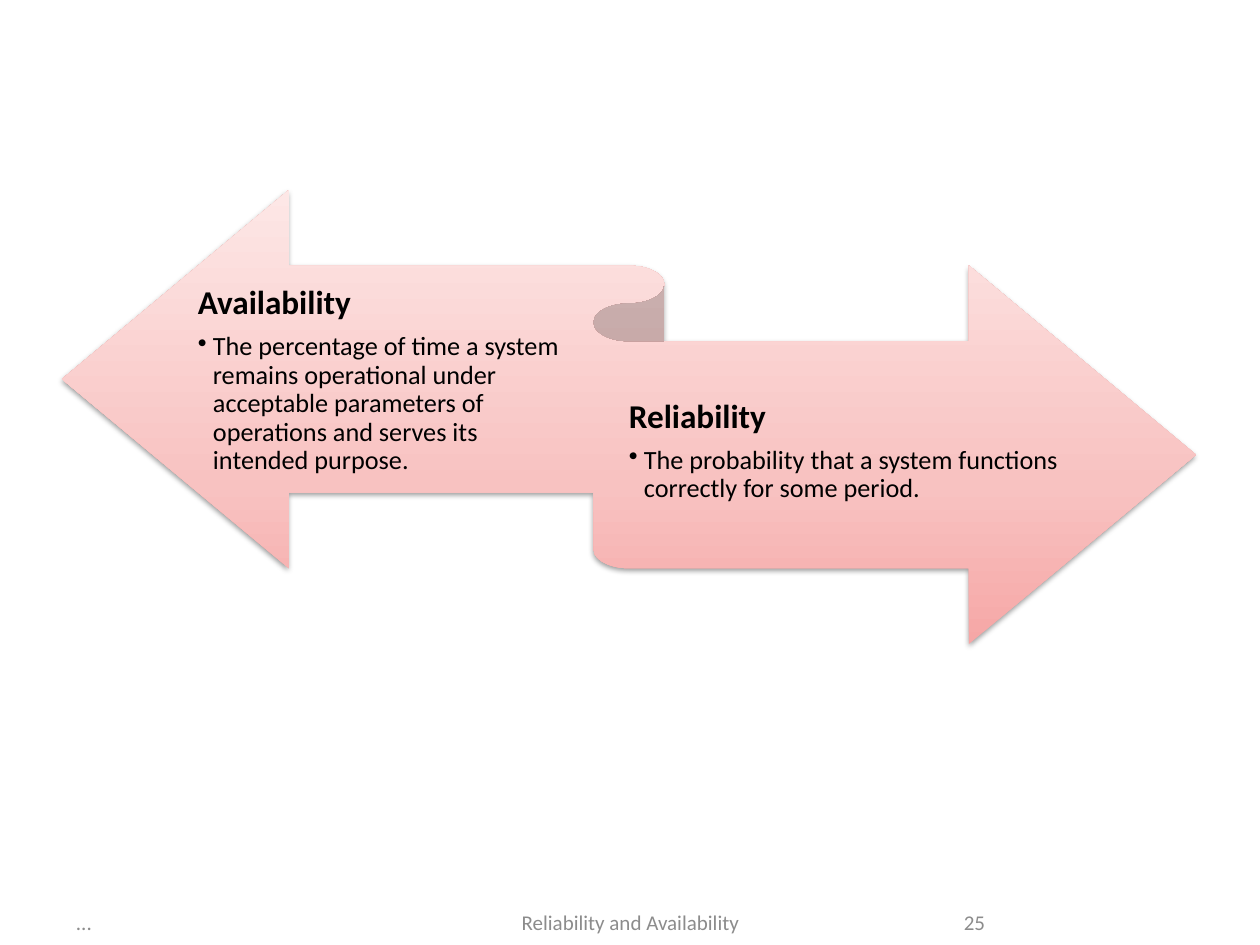
from lxml import etree
from pptx import Presentation
from pptx.dml.color import RGBColor
from pptx.enum.shapes import MSO_SHAPE
from pptx.enum.text import MSO_ANCHOR, PP_ALIGN
from pptx.oxml.ns import qn
from pptx.util import Emu, Pt

RIBBON = MSO_SHAPE.LEFT_RIGHT_RIBBON
MIDDLE = MSO_ANCHOR.MIDDLE
LEFT, CENTER, RIGHT = PP_ALIGN.LEFT, PP_ALIGN.CENTER, PP_ALIGN.RIGHT

EMU_PER_PX = 914400 / 126
FONT = "Calibri"
COLORS = {
    "text": "000000",
    "footer": "8C8C8C",
    "shadow": "000000",
    "ribbon_bottom": "F6A7A6",
    "ribbon_middle": "F8C2C1",
    "ribbon_top": "FDE7E6",
}
RIBBON_STOPS = [(0, "ribbon_bottom"), (35, "ribbon_middle"), (100, "ribbon_top")]
FOOTERS = [
    ("...", 63, 294, LEFT),
    ("Reliability and Availability", 431, 399, CENTER),
    ("25", 903, 95, RIGHT),
]
DEFINITIONS = [
    (
        "Availability",
        "The percentage of time a system remains operational under acceptable "
        "parameters of operations and serves its intended purpose.",
        (198, 270, 374, 222),
    ),
    (
        "Reliability",
        "The probability that a system functions correctly for some period.",
        (629, 341, 442, 222),
    ),
]


def px(length):
    return Emu(round(length * EMU_PER_PX))


def add_node(parent, tag, **attributes):
    return etree.SubElement(
        parent, qn(tag), {name: str(value) for name, value in attributes.items()}
    )


def add_box(page, area, margins=(13, 6, 13, 6)):
    frame = page.shapes.add_textbox(*map(px, area)).text_frame
    frame.word_wrap = True
    frame.vertical_anchor = MIDDLE
    frame.margin_left, frame.margin_top, frame.margin_right, frame.margin_bottom = map(
        px, margins
    )
    return frame


def write(para, text, size, color="text", bold=False, align=LEFT, spacing=1.0, after=0):
    para.alignment = align
    para.line_spacing = spacing
    para.space_after = Pt(after)
    span = para.add_run()
    span.text = text
    span.font.name = FONT
    span.font.size = Pt(size)
    span.font.bold = bold
    span.font.color.rgb = RGBColor.from_string(COLORS[color])


def add_bullet(para, indent):
    para.level = 1
    properties = para._p.get_or_add_pPr()
    properties.set("marL", str(px(indent)))
    properties.set("indent", str(-px(indent)))
    add_node(properties, "a:buChar", char="•")


def add_ribbon(page, area):
    ribbon = page.shapes.add_shape(RIBBON, *map(px, area))
    ribbon.line.fill.background()
    ribbon.fill.gradient()
    ribbon.fill.gradient_angle = 90
    properties = ribbon._element.spPr
    stops = properties.find(qn("a:gradFill")).find(qn("a:gsLst"))
    for stop in list(stops):
        stops.remove(stop)
    for position, color in RIBBON_STOPS:
        stop = add_node(stops, "a:gs", pos=position * 1000)
        add_node(stop, "a:srgbClr", val=COLORS[color])
    effects = add_node(properties, "a:effectLst")
    shadow = add_node(
        effects, "a:outerShdw", blurRad=Pt(3.1), dist=Pt(1.6), dir=5400000, rotWithShape=0
    )
    shade = add_node(shadow, "a:srgbClr", val=COLORS["shadow"])
    add_node(shade, "a:alpha", val=38000)


def add_definition(page, term, meaning, area):
    frame = add_box(page, area, margins=(0, 9, 0, 10))
    write(frame.paragraphs[0], term, 19, bold=True, spacing=0.9, after=6.5)
    para = frame.add_paragraph()
    write(para, meaning, 15, spacing=0.9, after=2)
    add_bullet(para, 15)


def add_footer(page, text, left, width, align):
    frame = add_box(page, (left, 903, width, 39))
    write(frame.paragraphs[0], text, 12, color="footer", align=align)


def main():
    deck = Presentation()
    deck.slide_width, deck.slide_height = px(1260), px(945)
    page = deck.slides.add_slide(deck.slide_layouts[6])
    for footer in FOOTERS:
        add_footer(page, *footer)
    add_ribbon(page, (62, 190, 1134, 454))
    for definition in DEFINITIONS:
        add_definition(page, *definition)
    deck.save("out.pptx")


if __name__ == "__main__":
    main()
